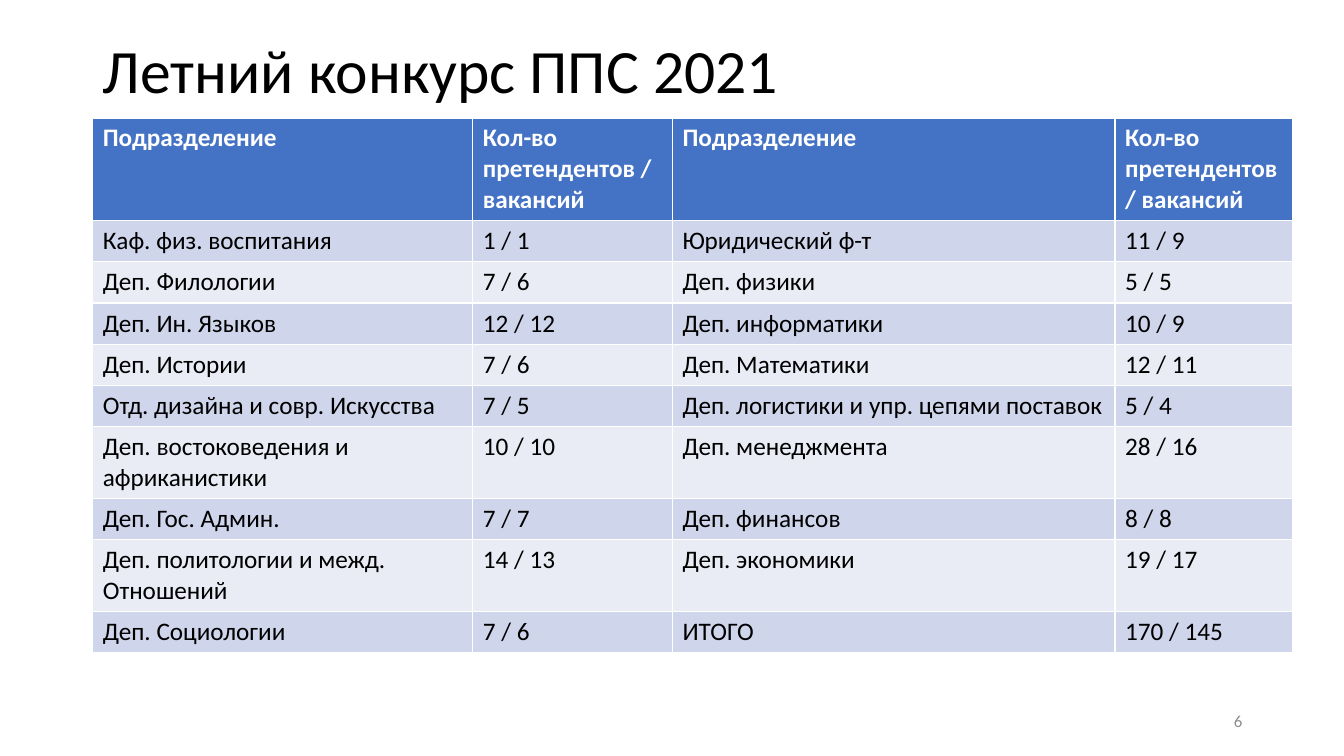
"""Build the slide with the summer competition table."""
from pptx import Presentation
from pptx.dml.color import RGBColor
from pptx.enum.text import MSO_ANCHOR, MSO_AUTO_SIZE, PP_ALIGN
from pptx.util import Inches, Pt

FONT = "Calibri"
BLACK = RGBColor(0x00, 0x00, 0x00)
WHITE = RGBColor(0xFF, 0xFF, 0xFF)
GRAY = RGBColor(0x8C, 0x8C, 0x8C)
BLUE = RGBColor(0x44, 0x72, 0xC4)
BANDS = (RGBColor(0xE9, 0xEB, 0xF5), RGBColor(0xCF, 0xD5, 0xEA))

WIDTHS = (3.77, 1.98, 4.39, 1.76)
HEADER = ("Подразделение", "Кол-во претендентов / вакансий") * 2
ROWS = (
    HEADER,
    ("Каф. физ. воспитания", "1 / 1", "Юридический ф-т", "11 / 9"),
    ("Деп. Филологии", "7 / 6", "Деп. физики", "5 / 5"),
    ("Деп. Ин. Языков", "12 / 12", "Деп. информатики", "10 / 9"),
    ("Деп. Истории", "7 / 6", "Деп. Математики", "12 / 11"),
    ("Отд. дизайна и совр. Искусства", "7 / 5",
     "Деп. логистики и упр. цепями поставок", "5 / 4"),
    ("Деп. востоковедения и африканистики", "10 / 10",
     "Деп. менеджмента", "28 / 16"),
    ("Деп. Гос. Админ.", "7 / 7", "Деп. финансов", "8 / 8"),
    ("Деп. политологии и межд. Отношений", "14 / 13",
     "Деп. экономики", "19 / 17"),
    ("Деп. Социологии", "7 / 6", "ИТОГО", "170 / 145"),
)


def write(frame, text, size=18, color=BLACK, bold=False,
          align=PP_ALIGN.LEFT, spacing=1.0):
    """Put formatted text into a text frame."""
    para = frame.paragraphs[0]
    para.alignment = align
    para.line_spacing = spacing
    run = para.add_run()
    run.text = text
    run.font.name = FONT
    run.font.size = Pt(size)
    run.font.bold = bold
    run.font.color.rgb = color


def add_title(slide, text):
    """Place and format the slide title."""
    title = slide.shapes.title
    title.left, title.top = Inches(0.92), Inches(0)
    title.width, title.height = Inches(11.5), Inches(1.45)
    frame = title.text_frame
    frame.auto_size = MSO_AUTO_SIZE.NONE
    frame.vertical_anchor = MSO_ANCHOR.MIDDLE
    write(frame, text, size=44, spacing=0.9)


def add_grid(slide, rows, widths):
    """Add the table with a blue header and banded rows."""
    height = 0.41
    table = slide.shapes.add_table(
        len(rows), len(widths), Inches(0.92), Inches(1.17),
        Inches(sum(widths)), Inches(height * len(rows))).table
    for column, width in zip(table.columns, widths):
        column.width = Inches(width)
    for index, row in enumerate(rows):
        head = index == 0
        table.rows[index].height = Inches(height)
        for cell, text in zip(table.rows[index].cells, row):
            cell.fill.solid()
            cell.fill.fore_color.rgb = BLUE if head else BANDS[index % 2]
            write(cell.text_frame, text, bold=head,
                  color=WHITE if head else BLACK)


def add_number(slide, text):
    """Add the page number at the lower right."""
    box = slide.shapes.add_textbox(
        Inches(9.42), Inches(6.95), Inches(3), Inches(0.4))
    frame = box.text_frame
    frame.word_wrap = True
    frame.vertical_anchor = MSO_ANCHOR.MIDDLE
    write(frame, text, size=12, color=GRAY, align=PP_ALIGN.RIGHT)


def main():
    """Build and save the deck."""
    deck = Presentation()
    deck.slide_width, deck.slide_height = Inches(13.33), Inches(7.5)
    slide = deck.slides.add_slide(deck.slide_layouts[5])
    add_title(slide, "Летний конкурс ППС 2021")
    add_grid(slide, ROWS, WIDTHS)
    add_number(slide, "6")
    deck.save("out.pptx")


if __name__ == "__main__":
    main()
